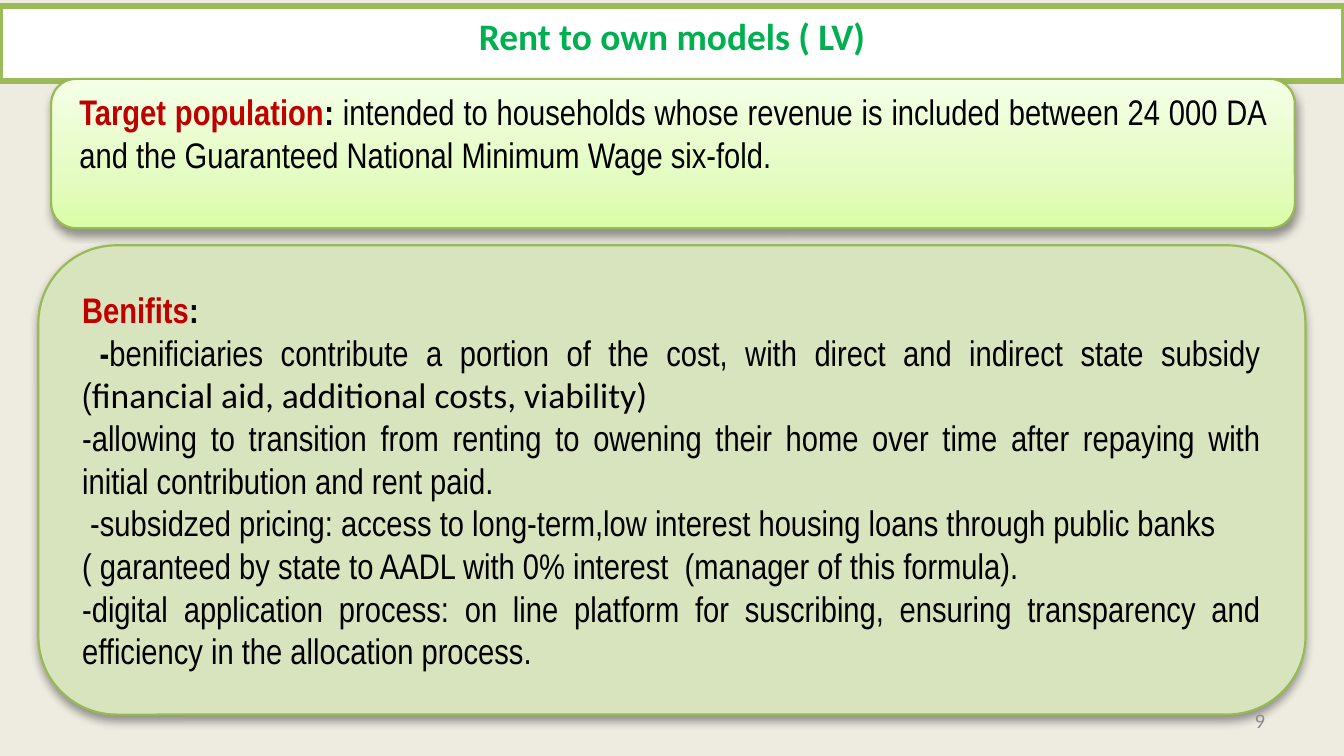
"""Build the slide on rent to own housing models."""
from copy import deepcopy

from lxml.etree import SubElement
from pptx import Presentation
from pptx.dml.color import RGBColor
from pptx.enum.shapes import MSO_SHAPE
from pptx.enum.text import MSO_ANCHOR, MSO_AUTO_SIZE, PP_ALIGN
from pptx.oxml.ns import qn
from pptx.util import Inches, Pt

SLIDE_WIDTH = 6.3
SLIDE_HEIGHT = SLIDE_WIDTH * 9 / 16
NARROW, CALIBRI = "Arial Narrow", "Calibri"
RED, BLACK, EDGE = "C00000", "000000", "98B955"
HEADING = (NARROW, RED, True)
STRONG = (NARROW, BLACK, True)
PLAIN = (NARROW, BLACK, False)
ASIDE = (CALIBRI, BLACK, False)

TARGET = [
    [
        ("Target population", HEADING),
        (": ", STRONG),
        ("intended to households whose revenue is included between 24 000 DA "
         "and the Guaranteed National Minimum Wage six-fold.", PLAIN),
    ],
]
BENEFITS = [
    [("Benifits", HEADING), (":", STRONG)],
    [
        (" -", STRONG),
        ("benificiaries contribute a portion of the cost, with direct and "
         "indirect state subsidy (", PLAIN),
        ("financial aid, additional costs, viability)", ASIDE),
    ],
    [("-allowing to transition from renting to owening their home over time "
      "after repaying with initial contribution and rent paid. ", PLAIN)],
    [(" -subsidzed pricing: access to long-term,low interest housing loans "
      "through public banks ", PLAIN)],
    [("( garanteed by state to AADL with 0% interest  (manager of this "
      "formula).", PLAIN)],
    [("-digital application process: on line platform for suscribing, "
      "ensuring transparency and efficiency in the allocation process.", PLAIN)],
]
GLOW = [(0, "DAFDA7"), (0.35, "E4FCC2"), (1, "F5FFE7")]


def paint(color_format, color):
    color_format.rgb = RGBColor.from_string(color)


def fill_solid(fill, color):
    fill.solid()
    paint(fill.fore_color, color)


def fill_gradient(shape, stops):
    shape.fill.gradient()
    shape.fill.gradient_angle = 90
    stop_list = shape._element.spPr.find(".//" + qn("a:gsLst"))
    stop_list.insert(1, deepcopy(stop_list[0]))
    for stop, (position, color) in zip(shape.fill.gradient_stops, stops):
        stop.position = position
        paint(stop.color, color)


def outline(shape, color, width):
    paint(shape.line.color, color)
    shape.line.width = Pt(width)


def add_shadow(shape):
    shape.shadow.inherit = False
    effects = shape._element.spPr.find(qn("a:effectLst"))
    shadow = SubElement(effects, qn("a:outerShdw"), blurRad=str(Pt(3.1)),
                        dist=str(Pt(1.6)), dir="5400000", rotWithShape="0")
    black = SubElement(shadow, qn("a:srgbClr"), val=BLACK)
    SubElement(black, qn("a:alpha"), val="38000")


def style_run(run, size, font, color, bold):
    run.font.size = Pt(size)
    run.font.name = font
    run.font.bold = bold
    paint(run.font.color, color)


def set_line(frame, text, align, anchor, size, color, bold):
    frame.text = text
    frame.word_wrap = True
    frame.auto_size = MSO_AUTO_SIZE.NONE
    frame.vertical_anchor = anchor
    frame.margin_left = frame.margin_right = Inches(0.06)
    frame.margin_top = frame.margin_bottom = Inches(0.03)
    frame.paragraphs[0].alignment = align
    style_run(frame.paragraphs[0].runs[0], size, CALIBRI, color, bold)


def add_title(slide, text):
    title = slide.shapes.title
    title.left, title.top = Inches(0), Inches(0.03)
    title.width, title.height = Inches(SLIDE_WIDTH), Inches(0.35)
    fill_solid(title.fill, "FFFFFF")
    outline(title, "9BBB59", 2)
    set_line(title.text_frame, text, PP_ALIGN.CENTER, MSO_ANCHOR.TOP,
             12.6, "00B050", True)


def add_panel(slide, box, paragraphs, anchor):
    panel = slide.shapes.add_shape(MSO_SHAPE.ROUNDED_RECTANGLE,
                                   *map(Inches, box))
    outline(panel, EDGE, 0.75)
    add_shadow(panel)
    frame = panel.text_frame
    frame.word_wrap = True
    frame.vertical_anchor = anchor
    for index, pieces in enumerate(paragraphs):
        paragraph = frame.add_paragraph() if index else frame.paragraphs[0]
        paragraph.alignment = PP_ALIGN.JUSTIFY
        for text, style in pieces:
            run = paragraph.add_run()
            run.text = text
            style_run(run, 12, *style)
    return panel


def add_page_number(slide, number):
    box = slide.shapes.add_textbox(*map(Inches, (4.52, 3.28, 1.47, 0.19)))
    set_line(box.text_frame, number, PP_ALIGN.RIGHT, MSO_ANCHOR.MIDDLE,
             7, "8C8C8C", False)


def main():
    deck = Presentation()
    deck.slide_width = Inches(SLIDE_WIDTH)
    deck.slide_height = Inches(SLIDE_HEIGHT)
    slide = deck.slides.add_slide(deck.slide_layouts[5])
    fill_solid(slide.background.fill, "EEECE1")

    add_title(slide, "Rent to own models ( LV)")
    target = add_panel(slide, (0.24, 0.37, 5.83, 0.7), TARGET, MSO_ANCHOR.TOP)
    target.text_frame.margin_top = Inches(0.02)
    fill_gradient(target, GLOW)
    benefits = add_panel(slide, (0.18, 1.15, 5.94, 2.2), BENEFITS,
                         MSO_ANCHOR.MIDDLE)
    fill_solid(benefits.fill, "D7E4BD")
    add_page_number(slide, "9")

    deck.save("out.pptx")


if __name__ == "__main__":
    main()
